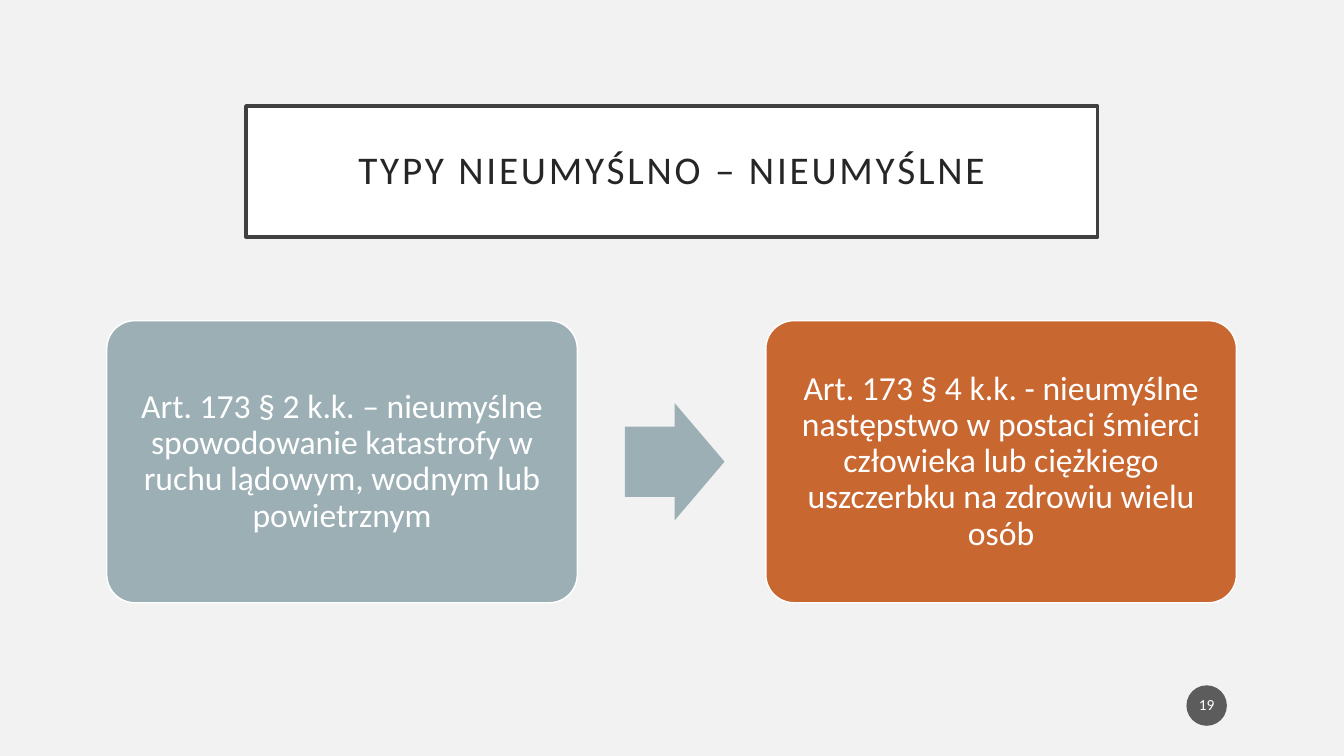
"""Build the slide on unintentional offence types."""
from lxml import etree
from pptx import Presentation
from pptx.dml.color import RGBColor
from pptx.enum import shapes, text
from pptx.oxml import ns
from pptx.util import Cm, Pt

WHITE = RGBColor(0xFF, 0xFF, 0xFF)
PALE = RGBColor(0xF2, 0xF2, 0xF2)
FRAME = RGBColor(0x40, 0x40, 0x40)
INK = RGBColor(0x26, 0x26, 0x26)
BADGE = RGBColor(0x1D, 0x1D, 0x1D)
STEEL = RGBColor(0x9B, 0xAF, 0xB5)
ORANGE = RGBColor(0xC9, 0x67, 0x31)

TITLE = "TYPY NIEUMYŚLNO – NIEUMYŚLNE"
STEPS = [
    ("Art. 173 § 2 k.k. – nieumyślne spowodowanie katastrofy w ruchu lądowym, "
     "wodnym lub powietrznym", STEEL),
    ("Art. 173 § 4 k.k. - nieumyślne następstwo w postaci śmierci człowieka lub "
     "ciężkiego uszczerbku na zdrowiu wielu osób", ORANGE),
]
PAGE = "19"

BOX_LEFT, BOX_TOP, BOX_W, BOX_H = 2.69, 8.08, 11.86, 7.11
BOX_PITCH = 16.61
ARROW_LEFT, ARROW_W, ARROW_H = 15.75, 2.51, 2.95


def paint(sp, fill, line=None, width=1):
    """Give a shape a solid fill and an optional outline."""
    sp.fill.solid()
    sp.fill.fore_color.rgb = fill
    if line is None:
        sp.line.fill.background()
    else:
        sp.line.color.rgb = line
        sp.line.width = Pt(width)


def write(sp, words, size, color, inset_x, inset_y):
    """Set centred text in a shape and return its run."""
    tf = sp.text_frame
    tf.text = words
    tf.word_wrap = True
    tf.auto_size = text.MSO_AUTO_SIZE.NONE
    tf.vertical_anchor = text.MSO_ANCHOR.MIDDLE
    tf.margin_left = tf.margin_right = Cm(inset_x)
    tf.margin_top = tf.margin_bottom = Cm(inset_y)
    p = tf.paragraphs[0]
    p.alignment = text.PP_ALIGN.CENTER
    p.line_spacing = 0.9
    r = p.runs[0]
    r.font.name = "Calibri"
    r.font.size = Pt(size)
    r.font.color.rgb = color
    return r


def add(s, kind, left, top, width, height):
    """Add a preset shape without a shadow, placed in centimetres."""
    sp = s.shapes.add_shape(kind, Cm(left), Cm(top), Cm(width), Cm(height))
    sp.shadow.inherit = False
    return sp


def main():
    """Compose and save the slide."""
    prs = Presentation()
    prs.slide_width, prs.slide_height = Cm(33.87), Cm(19.05)
    s = prs.slides.add_slide(prs.slide_layouts[5])
    s.background.fill.solid()
    s.background.fill.fore_color.rgb = PALE

    title = s.shapes.title
    title.left, title.top = Cm(6.2), Cm(2.67)
    title.width, title.height = Cm(21.46), Cm(3.3)
    paint(title, WHITE, FRAME, 2.5)
    r = write(title, TITLE, 28, INK, 0.5, 0.5)
    r.font._element.set("spc", "200")

    badge = add(s, shapes.MSO_SHAPE.OVAL, 29.9, 17.27, 1.02, 1.02)
    paint(badge, BADGE)
    color = badge.fill._xPr.find(".//" + ns.qn("a:srgbClr"))
    etree.SubElement(color, ns.qn("a:alpha"), val="70000")
    write(badge, PAGE, 11, WHITE, 0.05, 0.13)

    for i, (words, fill) in enumerate(STEPS):
        box = add(s, shapes.MSO_SHAPE.ROUNDED_RECTANGLE,
                  BOX_LEFT + i * BOX_PITCH, BOX_TOP, BOX_W, BOX_H)
        box.adjustments[0] = 0.1
        paint(box, fill, WHITE)
        write(box, words, 24, WHITE, 0.25, 0.25)

    arrow = add(s, shapes.MSO_SHAPE.RIGHT_ARROW, ARROW_LEFT,
                BOX_TOP + (BOX_H - ARROW_H) / 2, ARROW_W, ARROW_H)
    arrow.adjustments[0] = 0.6
    paint(arrow, STEEL)

    prs.save("out.pptx")


if __name__ == "__main__":
    main()
